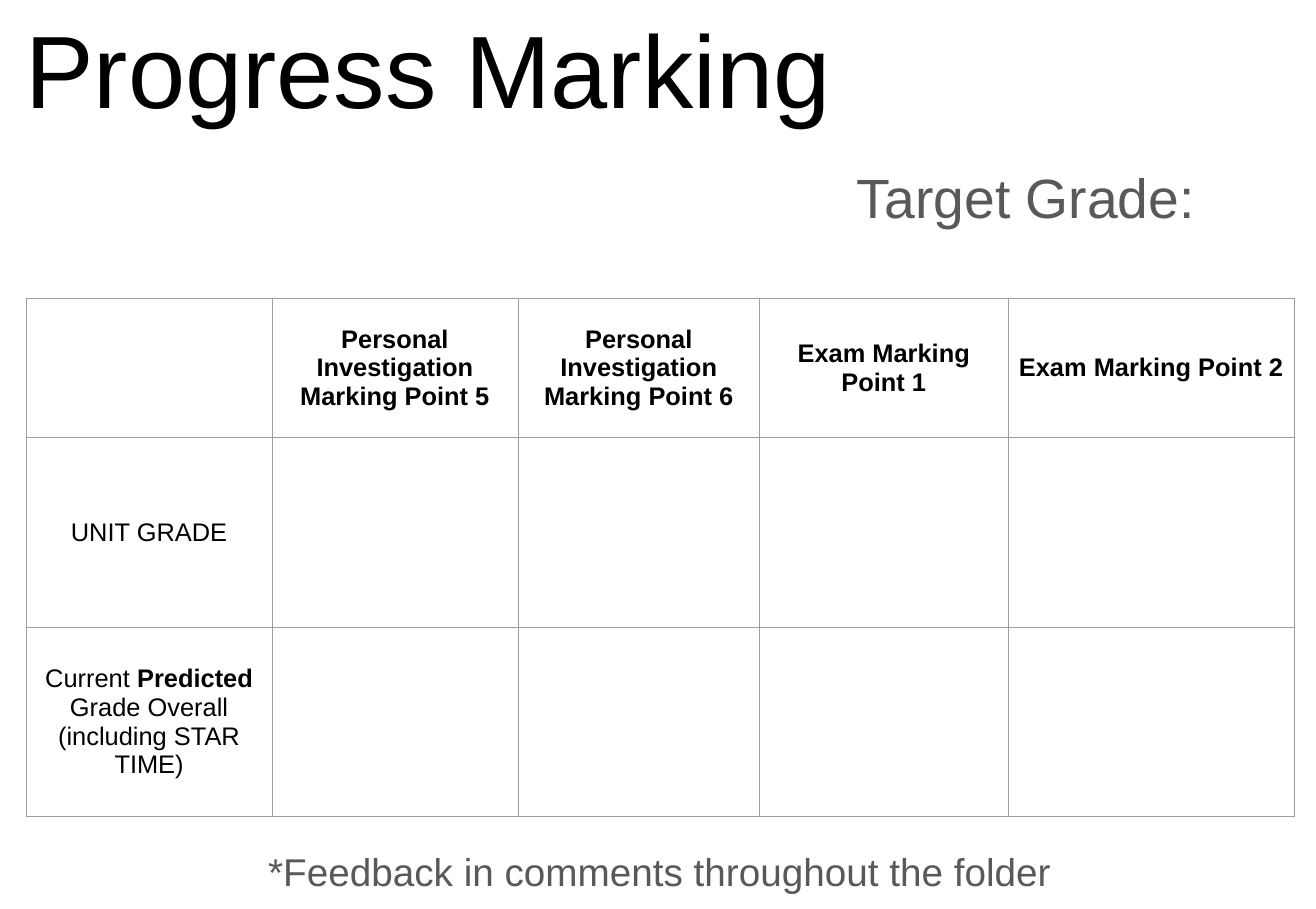
from lxml import etree
from pptx import Presentation
from pptx import util as u
from pptx.dml import color
from pptx.enum import text
from pptx.oxml import ns

FONT = "Arial"
HUES = {"ink": "000000", "soft": "595959", "grid": "9E9E9E"}
PAD = 0.18

COLS = [3.09, 3.09, 3.04, 3.12, 3.6]
ROWS = [1.75, 2.38, 2.38]
HEADS = [
    "Personal Investigation Marking Point 5",
    "Personal Investigation Marking Point 6",
    "Exam Marking Point 1",
    "Exam Marking Point 2",
]
# Each label is a list of (words, bold) runs
LABELS = [
    [("UNIT GRADE", False)],
    [("Current ", False), ("Predicted ", True),
     ("Grade Overall (including STAR TIME)", False)],
]


def write(frame, runs, size, hue="ink", align=text.PP_ALIGN.LEFT, lead=1.0):
    """Fill a text frame with (words, bold) runs in one format."""
    frame.word_wrap = True
    para = frame.paragraphs[0]
    para.alignment = align
    para.line_spacing = lead
    for words, bold in runs:
        run = para.add_run()
        run.text = words
        font = run.font
        font.name, font.size, font.bold = FONT, u.Pt(size), bold
        font.color.rgb = color.RGBColor.from_string(HUES[hue])


def inset(frame, anchor):
    frame.auto_size = text.MSO_AUTO_SIZE.NONE
    frame.vertical_anchor = anchor
    frame.margin_left = frame.margin_right = u.Inches(PAD)
    frame.margin_top = frame.margin_bottom = u.Inches(PAD)


def add_title(slide, box, words):
    title = slide.shapes.title
    title.left, title.top, title.width, title.height = map(u.Inches, box)
    inset(title.text_frame, text.MSO_ANCHOR.BOTTOM)
    write(title.text_frame, [(words, False)], 93)


def add_note(slide, box, words, size, align=text.PP_ALIGN.LEFT):
    frame = slide.shapes.add_textbox(*map(u.Inches, box)).text_frame
    inset(frame, text.MSO_ANCHOR.TOP)
    write(frame, [(words, False)], size, hue="soft", align=align, lead=1.08)


def add_edges(cell):
    props = cell._tc.get_or_add_tcPr()
    for side in ("lnL", "lnR", "lnT", "lnB"):
        line = etree.SubElement(props, ns.qn(f"a:{side}"), w=str(u.Pt(0.75)))
        fill = etree.SubElement(line, ns.qn("a:solidFill"))
        etree.SubElement(fill, ns.qn("a:srgbClr"), val=HUES["grid"])


def add_grid(slide, left, top):
    box = map(u.Inches, (left, top, sum(COLS), sum(ROWS)))
    table = slide.shapes.add_table(len(ROWS), len(COLS), *box).table
    table.first_row = table.horz_banding = False
    for col, width in zip(table.columns, COLS):
        col.width = u.Inches(width)
    for row, height in zip(table.rows, ROWS):
        row.height = u.Inches(height)

    # Plain ruled cells
    for cell in table.iter_cells():
        cell.margin_left = cell.margin_right = u.Inches(0.1)
        cell.margin_top = cell.margin_bottom = u.Inches(0.1)
        cell.vertical_anchor = text.MSO_ANCHOR.MIDDLE
        add_edges(cell)
        cell.fill.background()

    # Headings across, labels down
    filled = [(0, c, [(head, True)]) for c, head in enumerate(HEADS, 1)]
    filled += [(r, 0, runs) for r, runs in enumerate(LABELS, 1)]
    for r, c, runs in filled:
        write(table.cell(r, c).text_frame, runs, 23,
              align=text.PP_ALIGN.CENTER)


def main():
    deck = Presentation()
    deck.slide_width, deck.slide_height = u.Inches(16.54), u.Inches(11.42)
    slide = deck.slides.add_slide(deck.slide_layouts[5])

    add_title(slide, (0.14, 0.34, 11.51, 1.46), "Progress Marking")
    add_note(slide, (10.59, 1.8, 5.95, 1.76), "Target Grade:", 50)
    add_grid(slide, 0.33, 3.75)
    add_note(slide, (0.33, 10.42, 15.93, 0.68),
             "*Feedback in comments throughout the folder", 35,
             align=text.PP_ALIGN.CENTER)

    deck.save("out.pptx")


if __name__ == "__main__":
    main()
